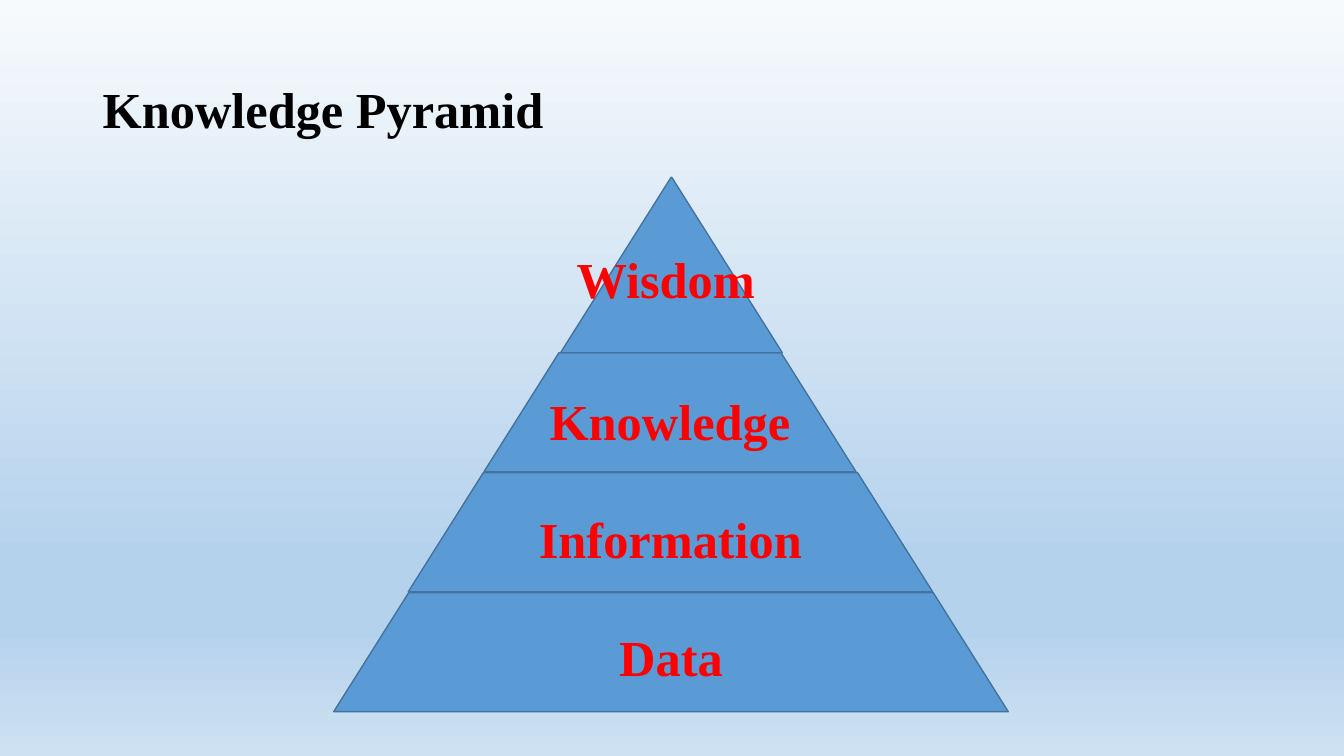
from copy import deepcopy
from dataclasses import dataclass

from pptx import Presentation
from pptx.dml.color import RGBColor
from pptx.enum import shapes, text
from pptx.oxml.ns import qn
from pptx.util import Inches, Pt

BLACK = RGBColor(0x00, 0x00, 0x00)
RED = RGBColor(0xFF, 0x00, 0x00)
BLUE = RGBColor(0x5B, 0x9B, 0xD5)
EDGE = RGBColor(0x43, 0x73, 0x9E)
SKY = [
    (0, RGBColor(0xF7, 0xFA, 0xFD)),
    (0.74, RGBColor(0xB5, 0xD2, 0xEC)),
    (0.83, RGBColor(0xB5, 0xD2, 0xEC)),
    (1, RGBColor(0xCE, 0xE1, 0xF2)),
]
FONT = "Times New Roman"
SLOPE = 0.63


@dataclass
class Band:
    label: str
    left: float
    top: float
    width: float
    height: float


BANDS = [
    Band("Data", 3.31, 5.88, 6.69, 1.18),
    Band("Information", 4.05, 4.69, 5.2, 1.18),
    Band("Knowledge", 4.8, 3.5, 3.69, 1.18),
    Band("", 5.56, 1.76, 2.2, 1.74),  # the tip's label is a separate box
]


def write(tf, words: str, color: RGBColor, align=text.PP_ALIGN.LEFT) -> None:
    """Put one bold line into a text frame."""
    tf.text = words
    p = tf.paragraphs[0]
    p.alignment = align
    font = p.runs[0].font
    font.name, font.size, font.bold = FONT, Pt(36), True
    font.color.rgb = color


def paint_background(s) -> None:
    fill = s.background.fill
    fill.gradient()
    fill.gradient_angle = 270
    stops = next(s.element.iter(qn("a:gsLst")))
    while len(stops) < len(SKY):
        stops.append(deepcopy(stops[0]))
    for stop, (position, color) in zip(fill.gradient_stops, SKY):
        stop.position = position
        stop.color.rgb = color


def add_band(s, band: Band) -> None:
    sp = s.shapes.add_shape(
        shapes.MSO_SHAPE.TRAPEZOID, Inches(band.left), Inches(band.top),
        Inches(band.width), Inches(band.height))
    sp.adjustments[0] = SLOPE
    sp.shadow.inherit = False
    sp.fill.solid()
    sp.fill.fore_color.rgb = BLUE
    sp.line.color.rgb = EDGE
    sp.line.width = Pt(1)
    if band.label:
        sp.text_frame.vertical_anchor = text.MSO_ANCHOR.MIDDLE
        write(sp.text_frame, band.label, RED, text.PP_ALIGN.CENTER)


def add_text(s, words: str, color: RGBColor, left: float, top: float,
             width: float, height: float):
    sp = s.shapes.add_textbox(
        Inches(left), Inches(top), Inches(width), Inches(height))
    tf = sp.text_frame
    tf.word_wrap = True
    write(tf, words, color)
    return tf


def main() -> None:
    prs = Presentation()
    prs.slide_width, prs.slide_height = Inches(13.33), Inches(7.5)
    s = prs.slides.add_slide(prs.slide_layouts[6])
    paint_background(s)

    # Title
    tf = add_text(s, "Knowledge Pyramid", BLACK, 0.92, 0.37, 11.5, 1.48)
    tf.vertical_anchor = text.MSO_ANCHOR.MIDDLE
    tf.paragraphs[0].line_spacing = 0.9

    # Pyramid, from the base up
    for band in BANDS:
        add_band(s, band)
    tf = add_text(s, "Wisdom", RED, 5.62, 2.41, 2.18, 0.71)
    tf.auto_size = text.MSO_AUTO_SIZE.SHAPE_TO_FIT_TEXT

    prs.save("out.pptx")


if __name__ == "__main__":
    main()
